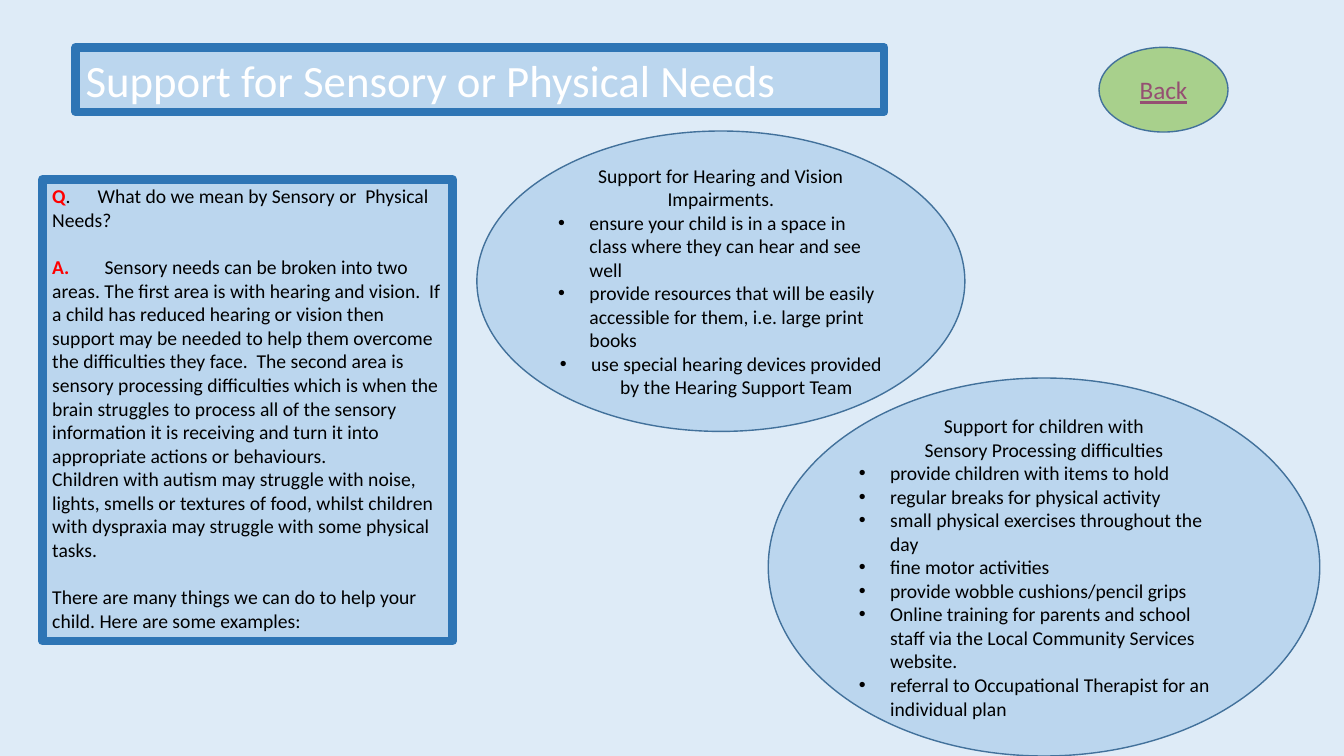
import dataclasses

import pptx
import pptx.dml.color
import pptx.enum.shapes
import pptx.enum.text
import pptx.oxml
import pptx.oxml.ns
import pptx.util

Inches = pptx.util.Inches
Pt = pptx.util.Pt
SHAPE = pptx.enum.shapes.MSO_SHAPE
ALIGN = pptx.enum.text.PP_ALIGN
ANCHOR = pptx.enum.text.MSO_ANCHOR


@dataclasses.dataclass(frozen=True)
class Theme:
    font: str = "Calibri"
    title_size: int = 32
    button_size: int = 18
    body_size: int = 14
    background: str = "DEEBF7"
    panel: str = "BBD6EE"
    frame: str = "2E75B5"
    outline: str = "42719B"
    button: str = "A8D08C"
    button_text: str = "954F72"
    white: str = "FFFFFF"
    black: str = "000000"
    red: str = "FF0000"


@dataclasses.dataclass
class Para:
    text: str
    lead: str = ""  # bold red opening
    align: ALIGN = ALIGN.LEFT
    bullet: bool = False
    before: float = 0  # points
    tab: float = 0  # inches


def rgb(value):
    return pptx.dml.color.RGBColor.from_string(value)


class SlideBuilder:
    def __init__(self, slide, theme):
        self.slide = slide
        self.theme = theme
        fill = slide.background.fill
        fill.solid()
        fill.fore_color.rgb = rgb(theme.background)

    def _shape(self, kind, box, fill, line, width, anchor):
        sp = self.slide.shapes.add_shape(kind, *map(Inches, box))
        sp.shadow.inherit = False
        sp.fill.solid()
        sp.fill.fore_color.rgb = rgb(fill)
        sp.line.color.rgb = rgb(line)
        sp.line.width = Pt(width)
        sp.text_frame.word_wrap = True
        sp.text_frame.vertical_anchor = anchor
        return sp

    def _paragraph_xml(self, p, tag, **attrs):
        pPr = p._p.get_or_add_pPr()
        el = pptx.oxml.parse_xml(f"<a:{tag} {pptx.oxml.ns.nsdecls('a')}/>")
        for name, value in attrs.items():
            el.set(name, str(value))
        pPr.append(el)
        return el

    def _bullet(self, p):
        pPr = p._p.get_or_add_pPr()
        pPr.set("marL", str(Inches(0.31)))
        pPr.set("indent", str(Inches(-0.31)))
        self._paragraph_xml(p, "buFont", typeface="Arial")
        self._paragraph_xml(p, "buChar", char="•")

    def _tab(self, p, position):
        tabs = self._paragraph_xml(p, "tabLst")
        tab = pptx.oxml.parse_xml(f"<a:tab {pptx.oxml.ns.nsdecls('a')}/>")
        tab.set("pos", str(Inches(position)))
        tab.set("algn", "l")
        tabs.append(tab)

    def _write(self, sp, paras, size, color):
        tf = sp.text_frame
        tf.text = "\n".join(para.lead for para in paras)
        for p, para in zip(tf.paragraphs, paras):
            p.alignment = para.align
            if para.before:
                p.space_before = Pt(para.before)
            if para.bullet:
                self._bullet(p)
            if para.tab:
                self._tab(p, para.tab)
            for r in p.runs:
                r.font.bold = True
                r.font.color.rgb = rgb(self.theme.red)
            r = p.add_run()
            r.text = para.text
            r.font.color.rgb = rgb(color)
            for r in p.runs:
                r.font.name = self.theme.font
                r.font.size = Pt(size)

    def panel(self, box, paras, size, color):
        t = self.theme
        sp = self._shape(SHAPE.RECTANGLE, box, t.panel, t.frame, 6, ANCHOR.TOP)
        self._write(sp, paras, size, color)

    def oval(self, box, paras, size, color, fill):
        sp = self._shape(SHAPE.OVAL, box, fill, self.theme.outline, 1,
                         ANCHOR.MIDDLE)
        self._write(sp, paras, size, color)
        return sp

    def button(self, box, label):
        t = self.theme
        sp = self.oval(box, [Para(label, align=ALIGN.CENTER)],
                       t.button_size, t.button_text, t.button)
        sp.text_frame.paragraphs[0].runs[0].font.underline = True

    def support_oval(self, box, headings, points):
        t = self.theme
        paras = [Para(text, align=ALIGN.CENTER) for text in headings] + points
        self.oval(box, paras, t.body_size, t.black, t.panel)


def main():
    prs = pptx.Presentation()
    prs.slide_width = Inches(13.33)
    prs.slide_height = Inches(7.5)
    theme = Theme()
    page = SlideBuilder(prs.slides.add_slide(prs.slide_layouts[6]), theme)

    # Title and back button
    page.panel((0.75, 0.47, 8.02, 0.64),
               [Para("Support for Sensory or Physical Needs")],
               theme.title_size, theme.white)
    page.button((10.9, 0.47, 1.28, 0.84), "Back")

    # Question and answer
    line_gap = 17
    page.panel((0.42, 1.78, 4.07, 4.58), [
        Para(".\tWhat do we mean by Sensory or  Physical Needs?",
             lead="Q", tab=0.45),
        Para("\tSensory needs can be broken into two areas. The first area is "
             "with hearing and vision.  If a child has reduced hearing or "
             "vision then support may be needed to help them overcome the "
             "difficulties they face.  The second area is sensory processing "
             "difficulties which is when the brain struggles to process all "
             "of the sensory information it is receiving and turn it into "
             "appropriate actions or behaviours.",
             lead="A.", before=line_gap, tab=0.52),
        Para("Children with autism may struggle with noise, lights, smells or "
             "textures of food, whilst children with dyspraxia may struggle "
             "with some physical tasks."),
        Para("There are many things we can do to help your child. Here are "
             "some examples:", before=line_gap),
    ], theme.body_size, theme.black)

    # Hearing and vision support
    page.support_oval(
        (4.73, 1.3, 4.84, 2.98),
        ["Support for Hearing and Vision Impairments."],
        [Para("ensure your child is in a space in class where they can hear "
              "and see well", bullet=True),
         Para("provide resources that will be easily accessible for them, "
              "i.e. large print books", bullet=True),
         Para("use special hearing devices provided by the Hearing Support "
              "Team", bullet=True, align=ALIGN.CENTER)])

    # Sensory processing support
    page.support_oval(
        (7.62, 3.75, 5.47, 3.75),
        ["Support for children with", "Sensory Processing difficulties"],
        [Para(text, bullet=True) for text in (
            "provide children with items to hold",
            "regular breaks for physical activity",
            "small physical exercises throughout the day",
            "fine motor activities",
            "provide wobble cushions/pencil grips",
            "Online training for parents and school staff via the Local "
            "Community Services website.",
            "referral to Occupational Therapist for an individual plan")])

    prs.save("out.pptx")


if __name__ == "__main__":
    main()
